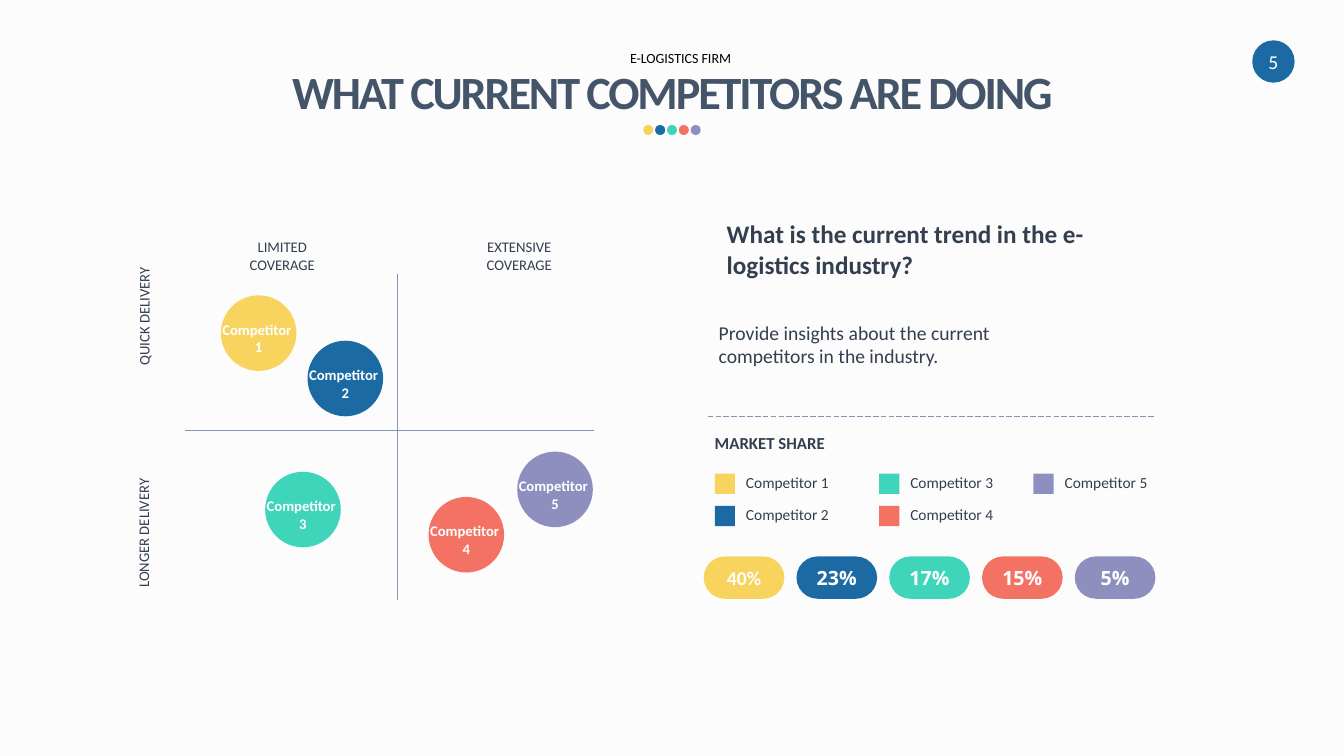
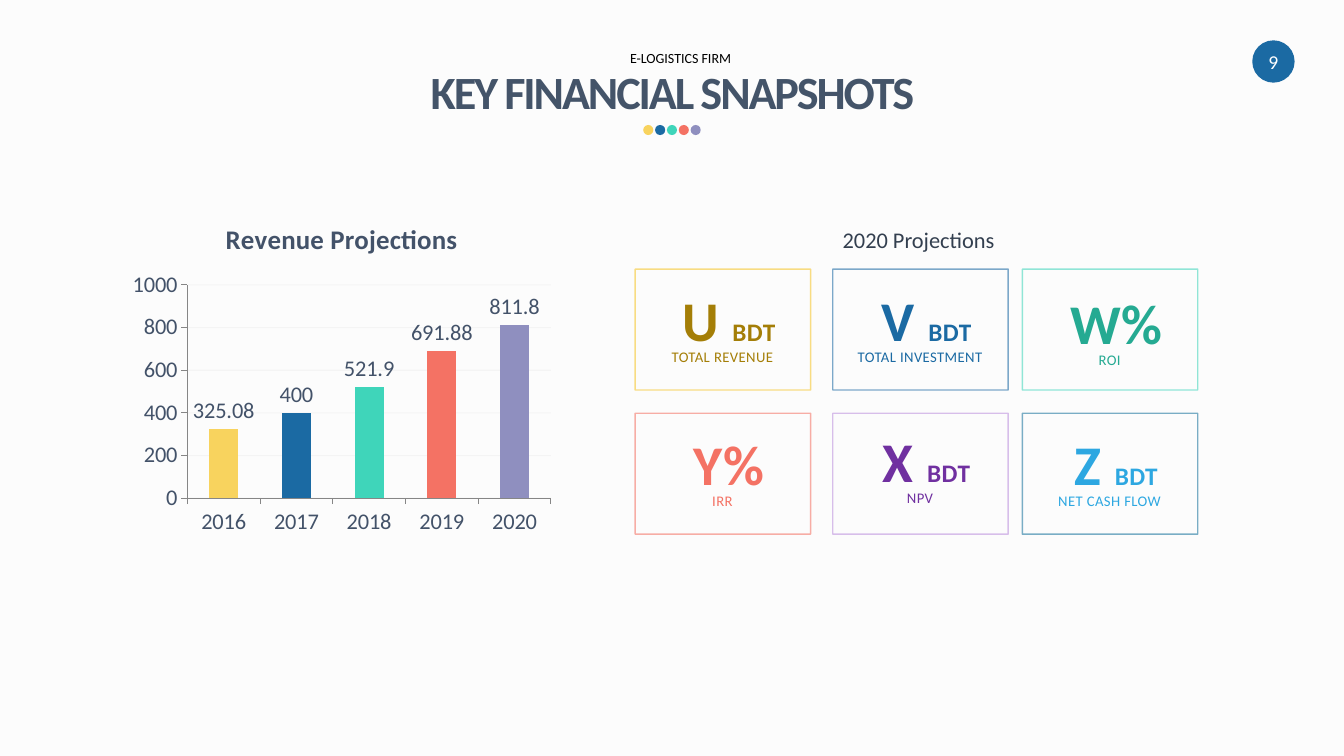
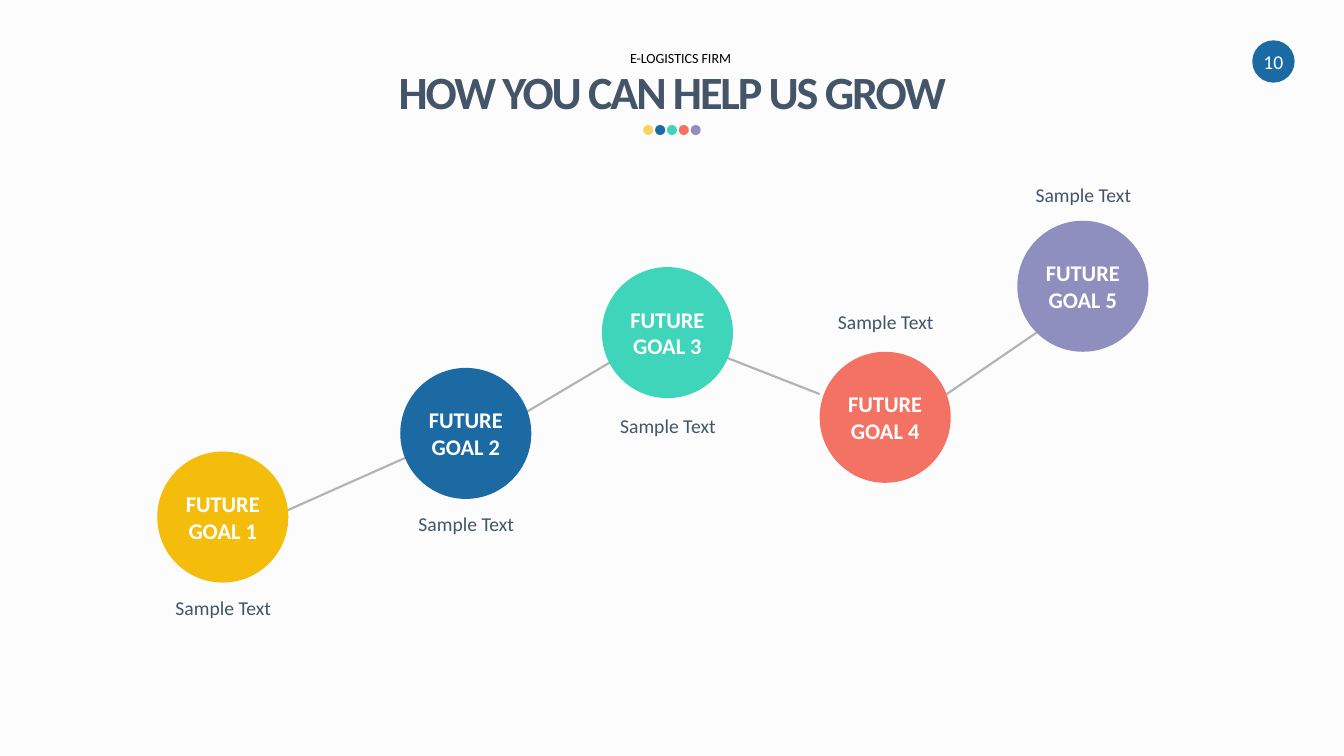
from pptx import Presentation
from pptx.chart.data import CategoryChartData
from pptx.dml.color import RGBColor
from pptx.enum.chart import XL_CHART_TYPE, XL_LABEL_POSITION, XL_TICK_MARK
from pptx.enum.dml import MSO_LINE
from pptx.enum.shapes import MSO_CONNECTOR, MSO_SHAPE
from pptx.enum.text import MSO_ANCHOR, PP_ALIGN
from pptx.oxml.ns import qn
from pptx.util import Inches, Pt

LEFT, CENTER = PP_ALIGN.LEFT, PP_ALIGN.CENTER
TOP, MIDDLE = MSO_ANCHOR.TOP, MSO_ANCHOR.MIDDLE
OVAL, RECTANGLE, PILL = MSO_SHAPE.OVAL, MSO_SHAPE.RECTANGLE, MSO_SHAPE.ROUNDED_RECTANGLE
STRAIGHT, LONG_DASH = MSO_CONNECTOR.STRAIGHT, MSO_LINE.LONG_DASH
COLUMNS, OUTSIDE_END = XL_CHART_TYPE.COLUMN_CLUSTERED, XL_LABEL_POSITION.OUTSIDE_END
TICK_OUT = XL_TICK_MARK.OUTSIDE

# Shared look
FONT, PILL_FONT = "Calibri", "Open Sans"
YELLOW, BLUE, TEAL, CORAL, VIOLET = PALETTE = ["F8D35E", "1B6AA3", "3FD5BA", "F47264", "8F8FBF"]
WHITE, BLACK, PAPER = "FFFFFF", "000000", "FCFCFC"
INK, SLATE, CHART_INK = "333F4F", "445469", "435269"
AXIS_BLUE, AXIS_GRAY, LINK_GRAY = "8497B0", "868686", "B2B2B2"
INSETS, NO_INSETS = (0.1, 0.05, 0.1, 0.05), (0, 0, 0, 0)


def rgb(color):
    return RGBColor.from_string(color)


def fade(element, path, percent):
    """Give the colour found at path an opacity in percent."""
    color = element.xpath(path)[0]
    color.makeelement(qn("a:alpha"), {})
    alpha = color.makeelement(qn("a:alpha"), {"val": str(percent * 1000)})
    color.append(alpha)


# Text
def style_font(font, size, color, bold=False, name=FONT):
    font.name, font.size, font.bold = name, Pt(size), bold
    font.color.rgb = rgb(color)


def write(shape, text, size, color, bold=False, align=CENTER, anchor=TOP, wrap=True,
          insets=INSETS, font=FONT, tracking=0, leading=None):
    """Fill a shape with text; each line of it becomes a paragraph."""
    frame = shape.text_frame
    frame.word_wrap, frame.vertical_anchor = wrap, anchor
    (frame.margin_left, frame.margin_top,
     frame.margin_right, frame.margin_bottom) = map(Inches, insets)
    frame.text = text
    for para in frame.paragraphs:
        para.alignment = align
        if leading:
            para.line_spacing = leading
        style_font(para.font, size, color, bold, font)
        if tracking:
            para.font._rPr.set("spc", str(round(tracking * 100)))
    return frame


def add_text(page, place, text, size, color, **style):
    box = page.shapes.add_textbox(*map(Inches, place))
    write(box, text, size, color, **style)
    return box


# Shapes and lines
def add_shape(page, kind, place, fill=None):
    shape = page.shapes.add_shape(kind, *map(Inches, place))
    shape.shadow.inherit = False
    shape.line.fill.background()
    if fill:
        shape.fill.solid()
        shape.fill.fore_color.rgb = rgb(fill)
    else:
        shape.fill.background()
    return shape


def add_line(page, start, end, color, width, dash=None):
    line = page.shapes.add_connector(STRAIGHT, *map(Inches, start + end))
    line.line.color.rgb = rgb(color)
    line.line.width = Pt(width)
    if dash:
        line.line.dash_style = dash
    properties = line._element.spPr
    properties.append(properties.makeelement(qn("a:effectLst"), {}))


def start_page(deck, number, title):
    """Add a page with number badge, kicker, title and row of dots."""
    page = deck.slides.add_slide(deck.slide_layouts[6])
    badge = add_shape(page, OVAL, (12.42, 0.4, 0.42, 0.42), BLUE)
    write(badge, str(number), 14, WHITE, anchor=MIDDLE, wrap=False, insets=NO_INSETS)
    add_text(page, (6.08, 0.44, 1.34, 0.27), "E-LOGISTICS FIRM", 10, BLACK)
    for i, color in enumerate(PALETTE):
        add_shape(page, OVAL, (6.38 + 0.1175 * i, 1.24, 0.1, 0.1), color)
    add_text(page, (2.67, 0.63, 8, 0.56), title, 33, SLATE, bold=True,
             wrap=False, insets=NO_INSETS, tracking=-1.5)
    return page


# Competitors
def add_position_map(page):
    add_line(page, (3.94, 2.72), (3.94, 5.95), AXIS_BLUE, 0.5)
    add_line(page, (1.84, 4.27), (5.89, 4.27), AXIS_BLUE, 0.5)
    labels = [
        ("LIMITED COVERAGE", (2.13, 2.31, 1.34, 0.45), 0),
        ("EXTENSIVE COVERAGE", (4.44, 2.31, 1.42, 0.45), 0),
        ("QUICK DELIVERY", (0.76, 3, 1.34, 0.28), 270),
        ("LONGER DELIVERY", (0.65, 5.15, 1.55, 0.28), 270),
    ]
    for text, place, rotation in labels:
        add_text(page, place, text, 10.5, INK).rotation = rotation
    spots = [(2.19, 2.93), (3.05, 3.38), (2.63, 4.68), (4.25, 4.93), (5.13, 4.48)]
    for number, (spot, color) in enumerate(zip(spots, PALETTE), 1):
        bubble = add_shape(page, OVAL, (*spot, 0.75, 0.75), color)
        write(bubble, f"Competitor \n{number}", 10.5, WHITE, bold=True, anchor=MIDDLE,
              wrap=False, insets=(0, 0.1, 0, 0))


def add_market_share(page):
    add_line(page, (7.02, 4.13), (11.46, 4.13), AXIS_BLUE, 0.5, LONG_DASH)
    add_text(page, (6.99, 4.24, 3.81, 0.3), "MARKET SHARE", 12, INK, bold=True, align=LEFT)
    columns = [7.09, 8.72, 10.25]
    shares = ["40%", "23%", "17%", "15%", "5%"]
    for i, (share, color) in enumerate(zip(shares, PALETTE)):
        left, drop = columns[i // 2], 0.32 * (i % 2)
        add_shape(page, RECTANGLE, (left, 4.7 + drop, 0.2, 0.2), color)
        add_text(page, (left + 0.21, 4.64 + drop, 1.88, 0.29), f"Competitor {i + 1}",
                 11, INK, align=LEFT)
        pill = add_shape(page, PILL, (6.98 + 0.92 * i, 5.52, 0.8, 0.42), color)
        pill.adjustments[0] = 0.5
        write(pill, share, 14, WHITE, bold=True, anchor=MIDDLE, wrap=False,
              insets=NO_INSETS, font=PILL_FONT if i else FONT)


def build_competitors(deck):
    page = start_page(deck, 5, "WHAT CURRENT COMPETITORS ARE DOING")
    add_position_map(page)
    add_text(page, (7.11, 2.12, 4.4, 0.71),
             "What is the current trend in the e-logistics industry?",
             18, INK, bold=True, align=LEFT)
    add_text(page, (7.03, 3.13, 3.69, 0.57),
             "Provide insights about the current competitors in the industry.",
             14, INK, align=LEFT)
    add_market_share(page)


# Financial snapshots
def add_revenue_chart(page):
    data = CategoryChartData()
    data.categories = ["2016", "2017", "2018", "2019", "2020"]
    data.add_series("Series 1", [325.08, 400, 521.9, 691.88, 811.8])
    place = map(Inches, (1.23, 2.01, 4.32, 3.37))
    chart = page.shapes.add_chart(COLUMNS, *place, data).chart
    style_font(chart.font, 16, CHART_INK)
    chart.has_legend = False
    chart.has_title = True
    chart.chart_title.text_frame.text = "Revenue Projections"
    style_font(chart.chart_title.text_frame.paragraphs[0].font, 19.2, CHART_INK, bold=True)

    for axis in (chart.category_axis, chart.value_axis):
        axis.major_tick_mark = TICK_OUT
        axis.format.line.color.rgb = rgb(AXIS_GRAY)
        axis.format.line.width = Pt(0.75)
    values = chart.value_axis
    values.minimum_scale, values.maximum_scale, values.major_unit = 0, 1000, 200
    grid = values.major_gridlines.format.line
    grid.color.rgb, grid.width = rgb("808080"), Pt(0.75)
    fade(values._element, "c:majorGridlines//a:srgbClr", 5)

    plot = chart.plots[0]
    plot.gap_width, plot.vary_by_categories = 150, False
    plot.has_data_labels = True
    plot.data_labels.show_value = True
    plot.data_labels.position = OUTSIDE_END
    for i, color in enumerate(PALETTE):
        fill = plot.series[0].points[i].format.fill
        fill.solid()
        fill.fore_color.rgb = rgb(color)


def add_card(page, left, top, figure, unit, label, color, edge, opacity, drop):
    card = add_shape(page, RECTANGLE, (left, top, 1.74, 1.2))
    card.line.color.rgb, card.line.width = rgb(edge), Pt(1)
    fade(card._element, "./p:spPr/a:ln//a:srgbClr", opacity)
    add_text(page, (left + 0.12, top + 0.78 + drop, 1.49, 0.18), label, 10.5, color,
             insets=NO_INSETS, tracking=0.3)
    box = add_text(page, (left + 0.18, top + 0.16 + drop, 1.5, 0.67), figure, 40, color,
                   bold=True, wrap=False, insets=NO_INSETS, tracking=0.3)
    if unit:
        span = box.text_frame.paragraphs[0].add_run()
        span.text = unit
        span.font.size = Pt(18)


def build_financials(deck):
    page = start_page(deck, 9, "KEY FINANCIAL SNAPSHOTS")
    add_revenue_chart(page)
    add_text(page, (8.26, 2.14, 1.73, 0.4), "2020 Projections", 16, INK,
             align=LEFT, wrap=False, leading=1.2)
    # Figure, unit, label, text colour, edge colour, edge opacity, text drop
    cards = [
        ("U ", "BDT", "TOTAL REVENUE", "A47E07", YELLOW, 77, 0),
        ("V ", "BDT", "TOTAL INVESTMENT", BLUE, BLUE, 57, 0),
        ("W%", "", "ROI", "25AA92", TEAL, 57, 0.03),
        ("Y%", "", "IRR", CORAL, CORAL, 57, 0),
        ("X ", "BDT", "NPV", "7030A0", "BC8FDD", 57, -0.03),
        ("Z ", "BDT", "NET CASH FLOW", "2DA7E1", "17729D", 57, 0),
    ]
    columns = [6.3, 8.26, 10.14]
    for i, card in enumerate(cards):
        add_card(page, columns[i % 3], 2.67 + 1.43 * (i // 3), *card)


# Future goals
def build_goals(deck):
    page = start_page(deck, 10, "HOW YOU CAN HELP US GROW")
    links = [
        ((2.79, 5.09), (4.07, 4.52)),
        ((5.2, 4.1), (6.16, 3.53)),
        ((7.16, 3.53), (8.13, 3.91)),
        ((9.39, 3.91), (10.28, 3.3)),
    ]
    for start, end in links:
        add_line(page, start, end, LINK_GRAY, 1.5)
    # Circle left, circle top, caption top, colour
    goals = [
        (1.56, 4.48, 5.89, "F4BD0C"),
        (3.97, 3.65, 5.06, BLUE),
        (5.97, 2.65, 4.09, TEAL),
        (8.13, 3.49, 3.05, CORAL),
        (10.09, 2.19, 1.79, VIOLET),
    ]
    for number, (left, top, caption_top, color) in enumerate(goals, 1):
        circle = add_shape(page, OVAL, (left, top, 1.3, 1.3), color)
        write(circle, f"FUTURE GOAL {number}", 16, WHITE, bold=True, anchor=MIDDLE,
              insets=NO_INSETS)
        add_text(page, (left - 0.22, caption_top, 1.75, 0.31), "Sample Text", 14, SLATE,
                 leading=0.89)


def main():
    deck = Presentation()
    deck.slide_width, deck.slide_height = Inches(13.33), Inches(7.5)
    paper = deck.slide_master.background.fill
    paper.solid()
    paper.fore_color.rgb = rgb(PAPER)
    build_competitors(deck)
    build_financials(deck)
    build_goals(deck)
    deck.save("out.pptx")


if __name__ == "__main__":
    main()
